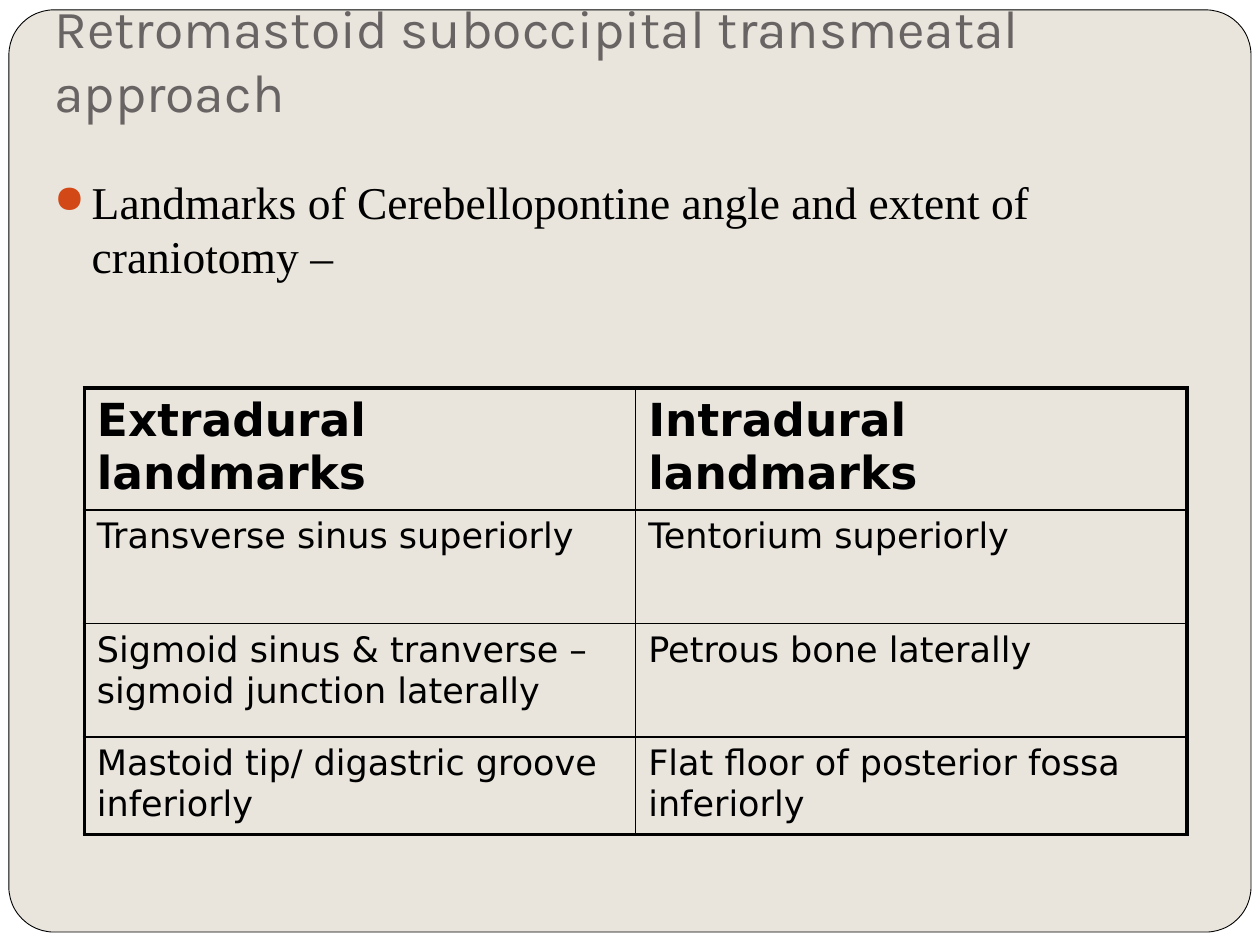
from lxml import etree
from pptx import Presentation
from pptx.dml.color import RGBColor
from pptx.enum.shapes import MSO_SHAPE
from pptx.enum.text import MSO_ANCHOR, MSO_AUTO_SIZE, PP_ALIGN
from pptx.oxml.ns import qn
from pptx.util import Cm, Pt

ROUNDED = MSO_SHAPE.ROUNDED_RECTANGLE
BOTTOM = MSO_ANCHOR.BOTTOM
NO_FIT = MSO_AUTO_SIZE.NONE
LEFT = PP_ALIGN.LEFT
TITLE_ONLY = 5

COLORS = {"page": "FFFFFF", "panel": "E9E5DC", "title": "696464",
          "text": "000000", "bullet": "D34817"}
TITLE_FONT = {"name": "Karla", "size": Pt(30.6), "bold": False}
BODY_FONT = {"name": "Times New Roman", "size": Pt(26)}
HEAD_FONT = {"name": "DejaVu Sans", "size": Pt(26), "bold": True}
CELL_FONT = {"name": "DejaVu Sans", "size": Pt(20), "bold": False}
LANDMARKS = [
    ("Extradural landmarks", "Intradural landmarks"),
    ("Transverse sinus superiorly", "Tentorium superiorly"),
    ("Sigmoid sinus & tranverse – sigmoid junction laterally",
     "Petrous bone laterally"),
    ("Mastoid tip/ digastric groove inferiorly",
     "Flat floor of posterior fossa inferiorly"),
]
ROW_HEIGHTS = (2.46, 2.29, 2.29, 1.96)
OUTER, INNER = Pt(2.25), Pt(1)


def rgb(key):
    """Return the named colour."""
    return RGBColor.from_string(COLORS[key])


def write(tf, text, font, color):
    """Write one left-aligned paragraph and return it."""
    p = tf.paragraphs[0]
    p.alignment = LEFT
    r = p.add_run()
    r.text = text
    for name, value in font.items():
        setattr(r.font, name, value)
    r.font.color.rgb = rgb(color)
    return p


def place(sp, box):
    """Move a shape to a box given in centimetres."""
    for name, value in zip(("left", "top", "width", "height"), box):
        setattr(sp, name, Cm(value))


def add_panel(s, box):
    """Draw the rounded panel behind everything else."""
    s.background.fill.solid()
    s.background.fill.fore_color.rgb = rgb("page")
    sp = s.shapes.add_shape(ROUNDED, *map(Cm, box))
    sp.adjustments[0] = 0.049
    sp.shadow.inherit = False
    sp.fill.solid()
    sp.fill.fore_color.rgb = rgb("panel")
    sp.line.color.rgb = rgb("text")
    sp.line.width = Pt(0.5)
    s.shapes.element.insert(2, sp.element)


def add_title(s, box, text):
    """Fill the title placeholder, resting on the bottom of its box."""
    sp = s.shapes.title
    place(sp, box)
    tf = sp.text_frame
    layout = {"word_wrap": True, "auto_size": NO_FIT,
              "vertical_anchor": BOTTOM, "margin_bottom": Cm(0.25)}
    for name, value in layout.items():
        setattr(tf, name, value)
    write(tf, text, TITLE_FONT, "title")


def add_body(s, box, text):
    """Add the bulleted statement."""
    tf = s.shapes.add_textbox(*map(Cm, box)).text_frame
    tf.word_wrap = True
    p = write(tf, text, BODY_FONT, "text")
    p.space_before = Pt(5.8)
    pPr = p._p.get_or_add_pPr()
    pPr.set("marL", str(Cm(0.76)))
    pPr.set("indent", str(Cm(-0.76)))
    color = etree.SubElement(pPr, qn("a:buClr"))
    etree.SubElement(color, qn("a:srgbClr"), val=COLORS["bullet"])
    etree.SubElement(pPr, qn("a:buSzPct"), val="85000")
    etree.SubElement(pPr, qn("a:buChar"), char="●")


def set_borders(cell, widths):
    """Draw the cell's left, right, top and bottom borders."""
    tcPr = cell._tc.get_or_add_tcPr()
    for i, (side, width) in enumerate(zip("LRTB", widths)):
        ln = etree.Element(qn(f"a:ln{side}"), w=str(width))
        fill = etree.SubElement(ln, qn("a:solidFill"))
        etree.SubElement(fill, qn("a:srgbClr"), val=COLORS["text"])
        tcPr.insert(i, ln)


def add_landmarks(s, box, rows):
    """Add the landmark table with a heavy outer frame."""
    n_rows, n_cols = len(rows), len(rows[0])
    table = s.shapes.add_table(n_rows, n_cols, *map(Cm, box)).table
    for column in table.columns:
        column.width = Cm(box[2] / n_cols)
    for i, values in enumerate(rows):
        table.rows[i].height = Cm(ROW_HEIGHTS[i])
        for j, text in enumerate(values):
            cell = table.cell(i, j)
            cell.fill.background()
            write(cell.text_frame, text, CELL_FONT if i else HEAD_FONT, "text")
            edges = (j == 0, j == n_cols - 1, i == 0, i == n_rows - 1)
            set_borders(cell, [OUTER if edge else INNER for edge in edges])


def main():
    """Build and save the slide."""
    prs = Presentation()
    prs.slide_width, prs.slide_height = Cm(25.4), Cm(19.05)
    s = prs.slides.add_slide(prs.slide_layouts[TITLE_ONLY])
    add_panel(s, (0.18, 0.2, 25.04, 18.59))
    add_title(s, (0.84, 0.76, 23.29, 1.98),
              "Retromastoid suboccipital transmeatal approach")
    add_landmarks(s, (1.7, 7.82, 22.23, sum(ROW_HEIGHTS)), LANDMARKS)
    add_body(s, (0.84, 3.38, 22.23, 11.86),
             "Landmarks of Cerebellopontine angle and extent of craniotomy –")
    prs.save("out.pptx")


if __name__ == "__main__":
    main()
